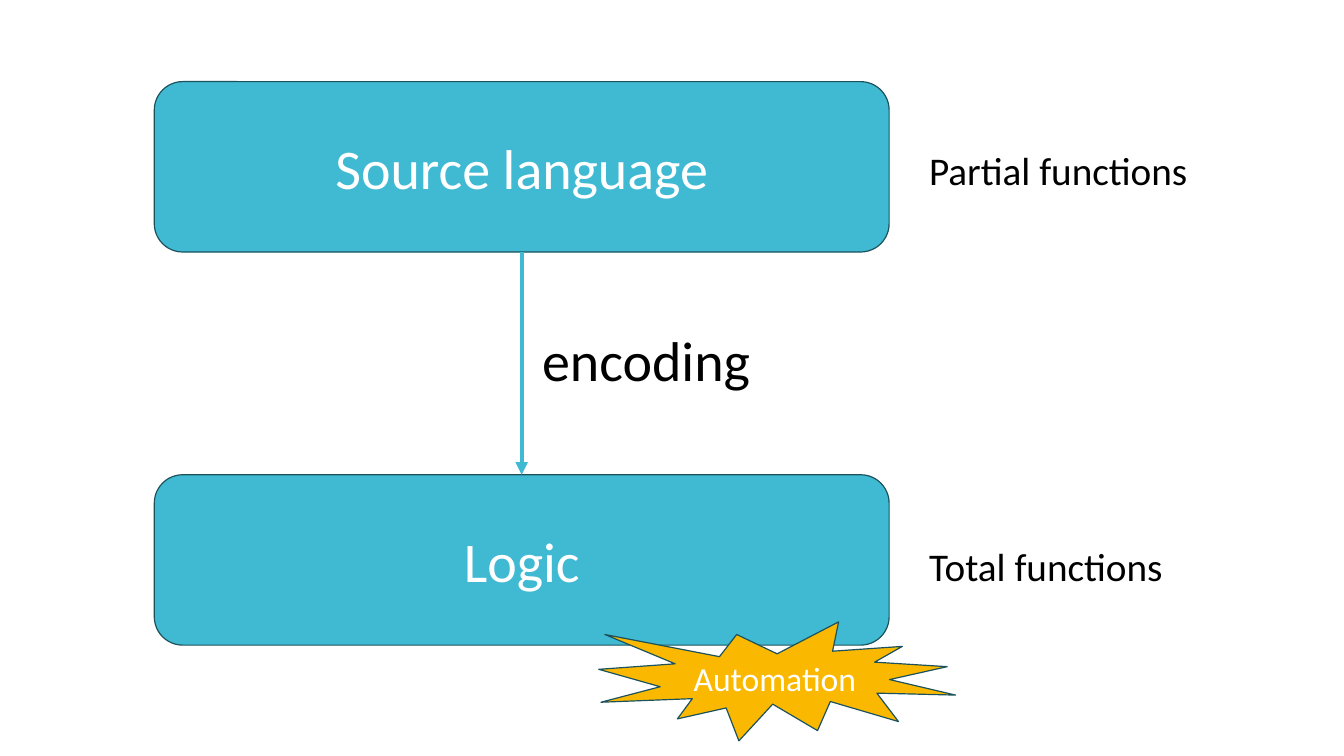
import pptx
import pptx.dml.color
import pptx.enum.shapes
import pptx.enum.text
import pptx.oxml
import pptx.oxml.ns
import pptx.util
from dataclasses import dataclass

Pt = pptx.util.Pt
Shapes = pptx.enum.shapes.MSO_SHAPE
Anchor = pptx.enum.text.MSO_ANCHOR
Align = pptx.enum.text.PP_ALIGN

# Content: each layer has a name and a side note with its top edge
LAYERS = [
    {"name": "Source language", "top": 58.3, "note": "Partial functions", "note_top": 100.8},
    {"name": "Logic", "top": 339.1, "note": "Total functions", "note_top": 383.8},
]
ARROW_LABEL = "encoding"
BADGE = "Automation"

# Layout in points
SLIDE_WIDTH, SLIDE_HEIGHT = 960, 540
BOX_LEFT, BOX_WIDTH, BOX_HEIGHT = 110.2, 524.9, 121.7
BOX_CENTER = BOX_LEFT + BOX_WIDTH / 2
NOTE_LEFT, NOTE_WIDTH, NOTE_HEIGHT = 656.6, 272, 41
LABEL_GAP, LABEL_WIDTH, LABEL_HEIGHT = 7.5, 209, 55.7
BADGE_FRAME = (427.7, 444.2, 254.9, 85)


@dataclass(frozen=True)
class Theme:
    font: str = "Calibri"
    box: str = "40BAD2"
    badge: str = "FAB900"
    outline: str = "1C525C"
    light: str = "FFFFFF"
    dark: str = "000000"
    large: int = 40
    medium: int = 28
    small: int = 24
    outline_width: float = 0.85
    arrow_width: float = 3


THEME = Theme()


def color(code):
    return pptx.dml.color.RGBColor.from_string(code)


def write(shape, text, size, text_color, align):
    frame = shape.text_frame
    frame.text = text
    frame.word_wrap = True
    paragraph = frame.paragraphs[0]
    paragraph.alignment = align
    font = paragraph.runs[0].font
    font.name = THEME.font
    font.size = Pt(size)
    font.color.rgb = color(text_color)


def add_filled_shape(slide, kind, frame, fill, text, size):
    shape = slide.shapes.add_shape(kind, *map(Pt, frame))
    shape.shadow.inherit = False
    shape.fill.solid()
    shape.fill.fore_color.rgb = color(fill)
    shape.line.color.rgb = color(THEME.outline)
    shape.line.width = Pt(THEME.outline_width)
    shape.text_frame.vertical_anchor = Anchor.MIDDLE
    write(shape, text, size, THEME.light, Align.CENTER)
    return shape


def add_label(slide, frame, text, size):
    label = slide.shapes.add_textbox(*map(Pt, frame))
    write(label, text, size, THEME.dark, Align.LEFT)
    label.text_frame.auto_size = pptx.enum.text.MSO_AUTO_SIZE.SHAPE_TO_FIT_TEXT


def add_arrow(slide, upper, lower):
    """Connect the bottom of the upper box to the top of the lower box."""
    arrow = slide.shapes.add_connector(pptx.enum.shapes.MSO_CONNECTOR.STRAIGHT, 0, 0, 0, 0)
    arrow.begin_connect(upper, 2)
    arrow.end_connect(lower, 0)
    arrow.line.color.rgb = color(THEME.box)
    arrow.line.width = Pt(THEME.arrow_width)
    line = arrow.line._get_or_add_ln()
    pptx.oxml.parse_xml  # noqa
    head = line.makeelement(pptx.oxml.ns.qn("a:tailEnd"), {"type": "triangle"})
    line.append(head)
    properties = arrow._element.spPr
    properties.append(properties.makeelement(pptx.oxml.ns.qn("a:effectLst"), {}))


def main():
    presentation = pptx.Presentation()
    presentation.slide_width = Pt(SLIDE_WIDTH)
    presentation.slide_height = Pt(SLIDE_HEIGHT)
    slide = presentation.slides.add_slide(presentation.slide_layouts[6])

    boxes = [
        add_filled_shape(slide, Shapes.ROUNDED_RECTANGLE,
                         (BOX_LEFT, layer["top"], BOX_WIDTH, BOX_HEIGHT),
                         THEME.box, layer["name"], THEME.large)
        for layer in LAYERS
    ]
    add_arrow(slide, *boxes)

    gap_middle = (LAYERS[0]["top"] + BOX_HEIGHT + LAYERS[1]["top"]) / 2
    label_top = gap_middle - LABEL_HEIGHT / 2 - 2.8
    add_label(slide, (BOX_CENTER + LABEL_GAP, label_top, LABEL_WIDTH, LABEL_HEIGHT),
              ARROW_LABEL, THEME.large)
    for layer in LAYERS:
        add_label(slide, (NOTE_LEFT, layer["note_top"], NOTE_WIDTH, NOTE_HEIGHT),
                  layer["note"], THEME.medium)

    add_filled_shape(slide, Shapes.EXPLOSION1, BADGE_FRAME, THEME.badge, BADGE, THEME.small)
    presentation.save("out.pptx")


if __name__ == "__main__":
    main()
